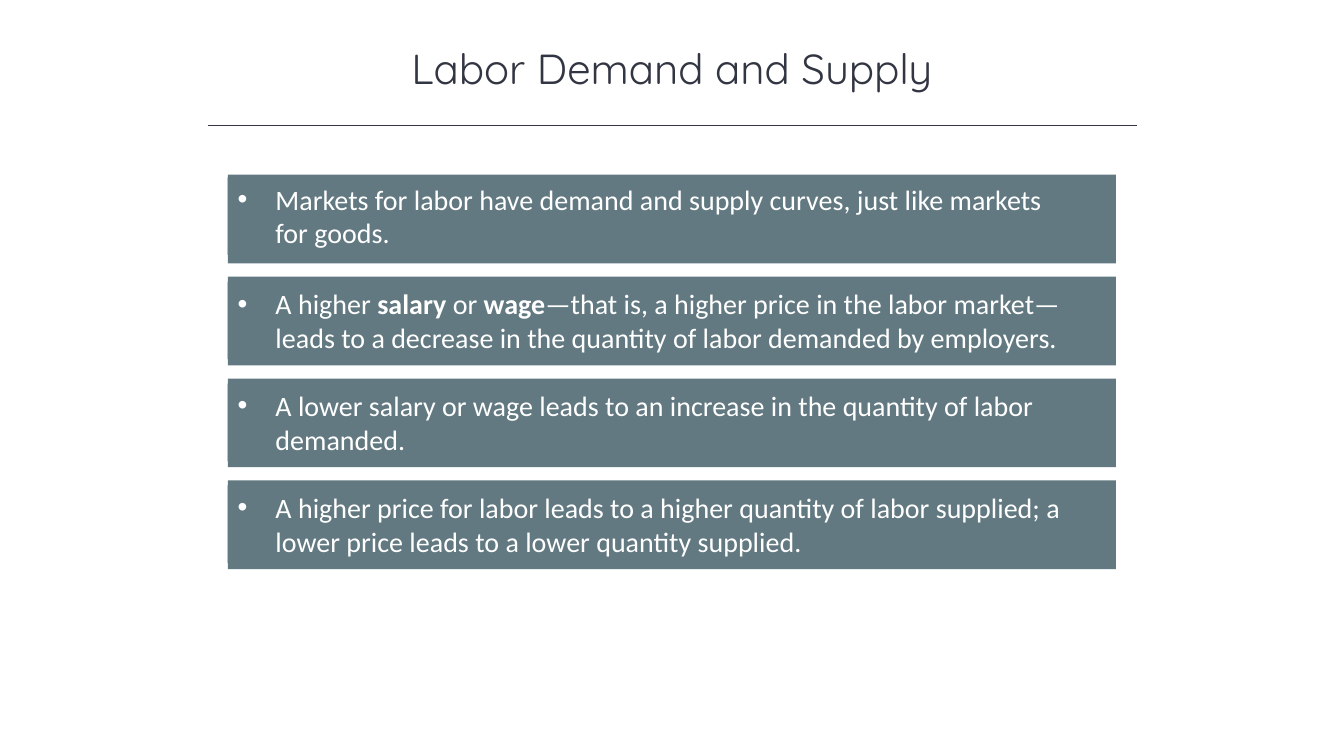
import pptx
import pptx.util
import pptx.dml.color
import pptx.enum.shapes
import pptx.enum.text
import lxml.etree
from pptx.oxml.ns import qn

Pt = pptx.util.Pt
Shape = pptx.enum.shapes.MSO_SHAPE
Align = pptx.enum.text.PP_ALIGN
Anchor = pptx.enum.text.MSO_ANCHOR
Fit = pptx.enum.text.MSO_AUTO_SIZE
hues = {"ink": "323542", "bar": "627981", "white": "FFFFFF"}
points = [
    [("Markets for labor have demand and supply curves, just like markets for goods.", False)],
    [("A higher ", False), ("salary", True), (" or ", False), ("wage", True),
     ("—that is, a higher price in the labor market—leads to a decrease in the quantity of labor demanded by employers.", False)],
    [("A lower salary or wage leads to an increase in the quantity of labor demanded.", False)],
    [("A higher price for labor leads to a higher quantity of labor supplied; a lower price leads to a lower quantity supplied.", False)],
]


def add_run(para, text, font, size, hue, bold=False):
    run = para.add_run()
    run.text = text
    run.font.name = font
    run.font.size = Pt(size)
    run.font.bold = bold
    run.font.color.rgb = pptx.dml.color.RGBColor.from_string(hues[hue])


def add_box(group, top, width, height):
    box = group.shapes.add_shape(Shape.RECTANGLE, Pt(162.72), Pt(top), Pt(width), Pt(height))
    box.shadow.inherit = False
    box.fill.solid()
    box.fill.fore_color.rgb = pptx.dml.color.RGBColor.from_string(hues["bar"])
    box.line.fill.background()
    return box


deck = pptx.Presentation()
deck.slide_width = Pt(960)
deck.slide_height = Pt(540)
slide = deck.slides.add_slide(deck.slide_layouts[5])

title = slide.shapes.title
title.left, title.top, title.width, title.height = Pt(120), Pt(26.64), Pt(720), Pt(43.92)
frame = title.text_frame
frame.word_wrap = True
frame.auto_size = Fit.SHAPE_TO_FIT_TEXT
frame.vertical_anchor = Anchor.TOP
head = frame.paragraphs[0]
head.alignment = Align.CENTER
add_run(head, "Labor Demand and Supply", "Quicksand", 30, "ink")

rule = slide.shapes.add_connector(
    pptx.enum.shapes.MSO_CONNECTOR.STRAIGHT, Pt(148.32), Pt(89.5), Pt(812.16), Pt(89.5))
rule.line.width = Pt(1)
rule.line.color.rgb = pptx.dml.color.RGBColor.from_string(hues["ink"])
lxml.etree.SubElement(rule._element.spPr, qn("a:effectLst"))

for row, parts in enumerate(points):
    top = 124.8 + 72.8 * row
    group = slide.shapes.add_group_shape()
    add_box(group, top, 634.32, 63.36)
    label = add_box(group, top + (3.6 if row else 1.92), 614.88, 55.44)
    frame = label.text_frame
    frame.word_wrap = True
    frame.auto_size = Fit.SHAPE_TO_FIT_TEXT
    frame.vertical_anchor = Anchor.TOP
    para = frame.paragraphs[0]
    para.alignment = Align.LEFT
    props = para._p.get_or_add_pPr()
    props.set("marL", str(Pt(27)))
    props.set("indent", str(-Pt(27)))
    lxml.etree.SubElement(props, qn("a:buFont")).set("typeface", "Arial")
    lxml.etree.SubElement(props, qn("a:buChar")).set("char", "•")
    for text, bold in parts:
        add_run(para, text, "Calibri", 20, "white", bold)

deck.save("out.pptx")
